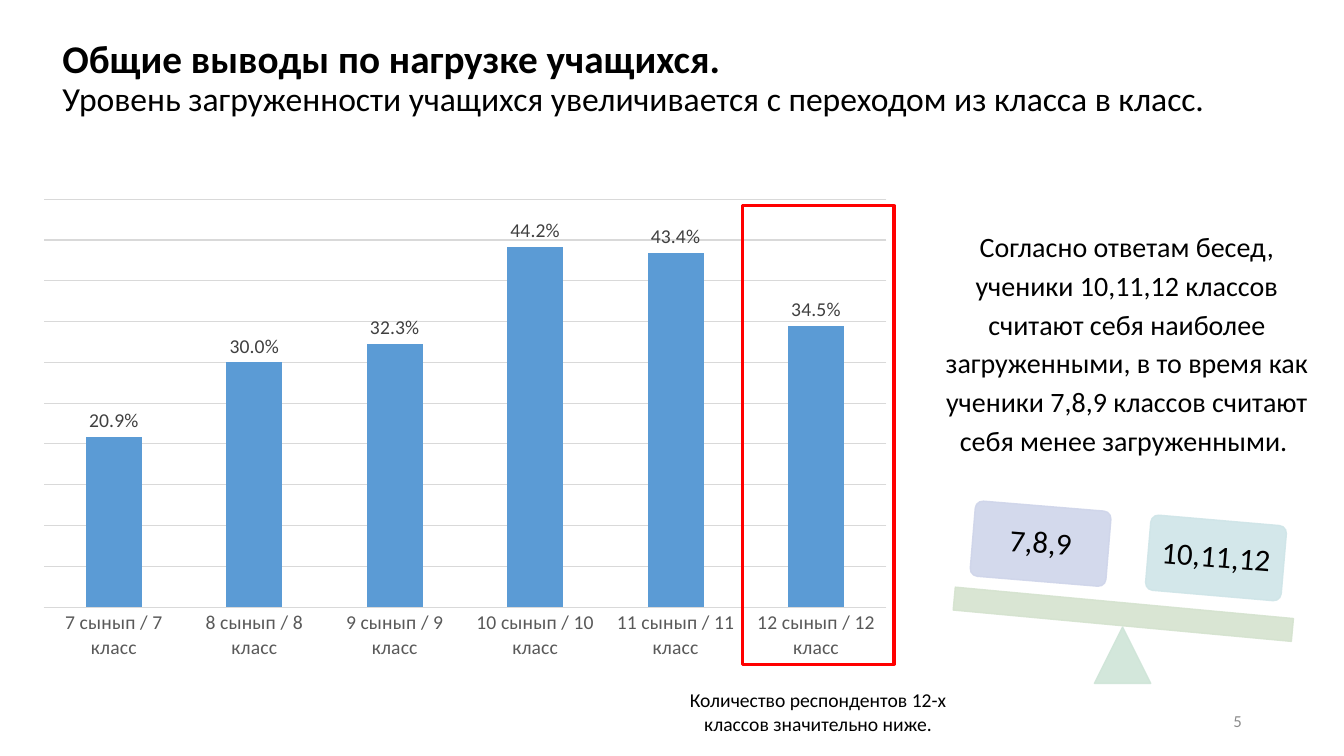
from lxml import etree
from pptx import Presentation
from pptx.chart.data import CategoryChartData
from pptx.dml.color import RGBColor
from pptx.enum.chart import XL_CHART_TYPE as ChartType
from pptx.enum.chart import XL_LABEL_POSITION as LabelPos
from pptx.enum.chart import XL_TICK_MARK as Tick
from pptx.enum.shapes import MSO_SHAPE as Shape
from pptx.enum.text import MSO_ANCHOR as Anchor
from pptx.enum.text import MSO_AUTO_SIZE as AutoSize
from pptx.enum.text import PP_ALIGN as Align
from pptx.oxml import parse_xml
from pptx.oxml.ns import nsdecls, qn
from pptx.util import Cm, Pt

FONT = "Calibri"
BLACK = RGBColor(0x00, 0x00, 0x00)
RED = RGBColor(0xFF, 0x00, 0x00)
BLUE = RGBColor(0x5B, 0x9B, 0xD5)
GRID_GREY = RGBColor(0xD9, 0xD9, 0xD9)
AXIS_GREY = RGBColor(0x59, 0x59, 0x59)
LABEL_GREY = RGBColor(0x40, 0x40, 0x40)
NUMBER_GREY = RGBColor(0x8C, 0x8C, 0x8C)
LILAC = RGBColor(0xCF, 0xD5, 0xEA)
AQUA = RGBColor(0xCF, 0xE5, 0xE8)
MINT = RGBColor(0xCF, 0xE5, 0xD8)
SAGE = RGBColor(0xD5, 0xE3, 0xCF)

LOAD_BY_GRADE = {7: 0.209, 8: 0.3, 9: 0.323, 10: 0.442, 11: 0.434, 12: 0.345}


def set_font(font, size, color=BLACK, bold=False):
    font.name = FONT
    font.size = Pt(size)
    font.bold = bold
    font.color.rgb = color


def write(p, text, size, color=BLACK, bold=False, align=Align.CENTER, spacing=1.0):
    """Add a formatted run to the paragraph."""
    p.alignment = align
    p.line_spacing = spacing
    r = p.add_run()
    r.text = text
    set_font(r.font, size, color, bold)


def add_title(s, heading, subheading):
    title = s.shapes.title
    title.left, title.top = Cm(1.32), Cm(0.15)
    title.width, title.height = Cm(31.98), Cm(3.68)
    tf = title.text_frame
    tf.auto_size = AutoSize.NONE
    tf.vertical_anchor = Anchor.MIDDLE
    p = tf.paragraphs[0]
    write(p, heading, 28, bold=True, align=Align.LEFT, spacing=0.9)
    p.add_line_break()
    write(p, subheading, 24, align=Align.LEFT, spacing=0.9)


def add_text(s, box, text, size, anchor=Anchor.TOP, **fmt):
    tf = s.shapes.add_textbox(*map(Cm, box)).text_frame
    tf.word_wrap = True
    tf.vertical_anchor = anchor
    write(tf.paragraphs[0], text, size, **fmt)


def add_shape(s, kind, box, line, width, fill=None, rotation=0):
    sp = s.shapes.add_shape(kind, *map(Cm, box))
    sp.shadow.inherit = False
    sp.rotation = rotation
    sp.line.color.rgb = line
    sp.line.width = Pt(width)
    if fill is None:
        sp.fill.background()
    else:
        sp.fill.solid()
        sp.fill.fore_color.rgb = fill
    return sp


def add_scale_part(s, kind, box, color, rotation=0):
    """Add a pastel shape with 90 % opacity in fill and line."""
    sp = add_shape(s, kind, box, color, 1, fill=color, rotation=rotation)
    for clr in sp.element.spPr.iter(qn("a:srgbClr")):
        etree.SubElement(clr, qn("a:alpha")).set("val", "90000")
    return sp


def add_weight(s, left, top, color, rotation, text):
    sp = add_scale_part(s, Shape.ROUNDED_RECTANGLE, (left, top, 3.43, 1.9),
                        color, rotation)
    sp.adjustments[0] = 0.1
    tf = sp.text_frame
    tf.word_wrap = True
    tf.margin_left = tf.margin_right = Cm(0.2)
    tf.vertical_anchor = Anchor.MIDDLE
    write(tf.paragraphs[0], text, 22, spacing=0.9)


def set_plot_layout(chart, **fractions):
    """Place the inner plot area by fractions of the chart frame."""
    modes = '<c:xMode val="edge"/><c:yMode val="edge"/>'
    sizes = "".join(f'<c:{k} val="{v}"/>' for k, v in fractions.items())
    layout = parse_xml(
        f'<c:layout {nsdecls("c")}><c:manualLayout><c:layoutTarget val="inner"/>'
        f"{modes}{sizes}</c:manualLayout></c:layout>")
    plot_area = chart.plots[0]._element.getparent()
    for old in plot_area.findall(qn("c:layout")):
        plot_area.remove(old)
    plot_area.insert(0, layout)


def add_load_chart(s):
    data = CategoryChartData(number_format="0.0%")
    data.categories = [f"{n} сынып / {n} класс" for n in LOAD_BY_GRADE]
    data.add_series("Series 1", LOAD_BY_GRADE.values())
    box = map(Cm, (0.66, 4.78, 22.12, 12.09))
    chart = s.shapes.add_chart(ChartType.COLUMN_CLUSTERED, *box, data).chart
    chart.has_legend = False
    chart.has_title = False
    set_font(chart.font, 14)
    set_plot_layout(chart, x=0.02, y=0.02, w=0.96, h=0.85)

    plot = chart.plots[0]
    plot.gap_width = 150
    plot.vary_by_categories = False
    fill = plot.series[0].format.fill
    fill.solid()
    fill.fore_color.rgb = BLUE
    plot.has_data_labels = True
    labels = plot.data_labels
    labels.show_value = True
    labels.number_format = "0.0%"
    labels.number_format_is_linked = False
    labels.position = LabelPos.OUTSIDE_END
    set_font(labels.font, 14, LABEL_GREY)

    cat_axis, val_axis = chart.category_axis, chart.value_axis
    cat_axis.major_tick_mark = Tick.NONE
    set_font(cat_axis.tick_labels.font, 14, AXIS_GREY)
    val_axis.visible = False
    val_axis.minimum_scale, val_axis.maximum_scale = 0, 0.5
    val_axis.major_unit = 0.05
    for line in (cat_axis.format.line, val_axis.major_gridlines.format.line):
        line.color.rgb = GRID_GREY
        line.width = Pt(0.75)


def add_scale(s):
    add_weight(s, 24.51, 12.75, LILAC, 4.7, "7,8,9")
    add_weight(s, 28.93, 13.11, AQUA, 4.9, "10,11,12")
    add_scale_part(s, Shape.ISOSCELES_TRIANGLE, (27.58, 15.8, 1.42, 1.42), MINT)
    add_scale_part(s, Shape.RECTANGLE, (24.03, 15.19, 8.56, 0.58), SAGE, 5.3)


def main():
    prs = Presentation()
    prs.slide_width, prs.slide_height = Cm(33.87), Cm(19.05)
    s = prs.slides.add_slide(prs.slide_layouts.get_by_name("Title Only"))

    add_title(s, "Общие выводы по нагрузке учащихся. ",
              "Уровень загруженности учащихся увеличивается с переходом "
              "из класса в класс.")
    add_load_chart(s)
    add_shape(s, Shape.RECTANGLE, (18.72, 5.18, 3.81, 11.56), RED, 2.25)
    add_text(s, (23.5, 5.54, 9.8, 6.15),
             "Согласно ответам бесед, ученики 10,11,12 классов считают себя "
             "наиболее загруженными, в то время как ученики 7,8,9 классов "
             "считают себя менее загруженными. ", 20, spacing=1.15)
    add_scale(s)
    add_text(s, (23.93, 17.65, 7.62, 1.02), "5", 12, anchor=Anchor.MIDDLE,
             color=NUMBER_GREY, align=Align.RIGHT)
    add_text(s, (16.76, 17.22, 7.72, 1.45),
             "Количество респондентов 12-х классов значительно ниже.", 14)
    prs.save("out.pptx")


if __name__ == "__main__":
    main()
